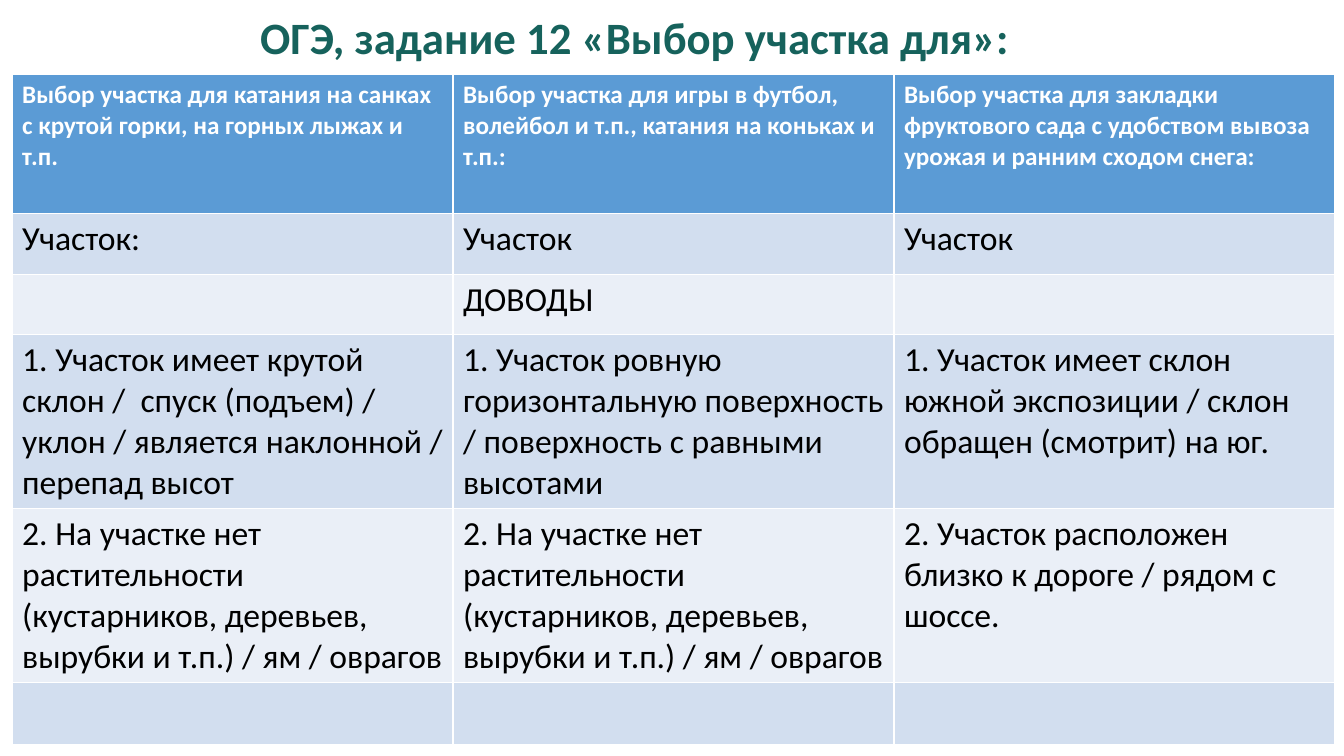
from dataclasses import dataclass

from pptx import Presentation
from pptx.dml.color import RGBColor
from pptx.enum.text import MSO_ANCHOR, MSO_AUTO_SIZE, PP_ALIGN
from pptx.util import Inches, Pt

TITLE = "ОГЭ, задание 12 «Выбор участка для»:"
NO_PLANTS = ("2. На участке нет растительности (кустарников, деревьев, "
             "вырубки и т.п.) / ям / оврагов")
ROWS = [
    (1.38, ("Выбор участка для катания на санках с крутой горки, на горных лыжах и т.п.",
            "Выбор участка для игры в футбол, волейбол и т.п., катания на коньках и т.п.:",
            "Выбор участка для закладки фруктового сада с удобством вывоза урожая "
            "и ранним сходом снега:")),
    (0.6, ("Участок:", "Участок", "Участок")),
    (0.6, ("", "ДОВОДЫ", "")),
    (1.72, ("1. Участок имеет крутой склон /  спуск (подъем) / уклон / "
            "является наклонной / перепад высот",
            "1. Участок ровную горизонтальную поверхность / поверхность с равными высотами",
            "1. Участок имеет склон южной экспозиции / склон обращен (смотрит) на юг.")),
    (1.72, (NO_PLANTS, NO_PLANTS,
            "2. Участок расположен близко к дороге / рядом с шоссе.")),
    (0.61, ("", "", "")),
]


@dataclass(frozen=True)
class Theme:
    font: str = "Calibri"
    title: str = "16625C"
    header: str = "5B9BD5"
    bands: tuple = ("D2DEEF", "EAEFF7")
    light: str = "FFFFFF"
    dark: str = "000000"
    title_size: int = 32
    header_size: int = 18
    body_size: int = 24


THEME = Theme()


def style(p, size, color, bold):
    f = p.font
    f.name, f.size, f.bold = THEME.font, Pt(size), bold
    f.color.rgb = RGBColor.from_string(color)


def add_title(s):
    title = s.shapes.title
    title.left, title.top = Inches(2.48), Inches(0.11)
    title.width, title.height = Inches(11.5), Inches(0.92)
    tf = title.text_frame
    tf.text = TITLE
    tf.auto_size = MSO_AUTO_SIZE.NONE
    tf.vertical_anchor = MSO_ANCHOR.TOP
    p = tf.paragraphs[0]
    p.alignment, p.line_spacing = PP_ALIGN.LEFT, 0.9
    style(p, THEME.title_size, THEME.title, True)


def add_sites(s):
    cols = len(ROWS[0][1])
    height = sum(h for h, _ in ROWS)
    table = s.shapes.add_table(len(ROWS), cols, Inches(0.12), Inches(0.74),
                               Inches(13.12), Inches(height)).table
    for i, (h, texts) in enumerate(ROWS):
        table.rows[i].height = Inches(h)
        header = i == 0
        fill = THEME.header if header else THEME.bands[(i - 1) % 2]
        size = THEME.header_size if header else THEME.body_size
        color = THEME.light if header else THEME.dark
        for j, text in enumerate(texts):
            cell = table.cell(i, j)
            cell.fill.solid()
            cell.fill.fore_color.rgb = RGBColor.from_string(fill)
            cell.text = text
            style(cell.text_frame.paragraphs[0], size, color, header)


def main():
    prs = Presentation()
    prs.slide_width, prs.slide_height = Inches(13.33), Inches(7.5)
    s = prs.slides.add_slide(prs.slide_layouts[5])
    add_title(s)
    add_sites(s)
    prs.save("out.pptx")


if __name__ == "__main__":
    main()
